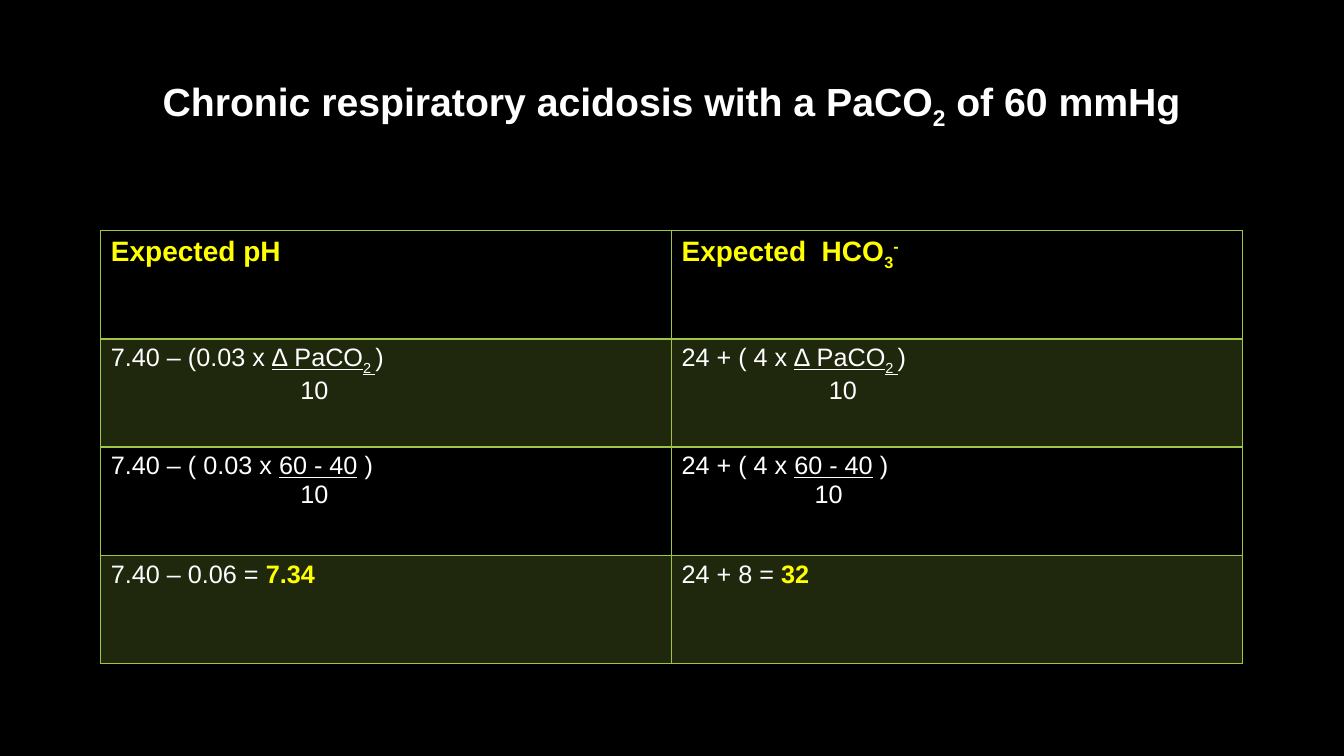
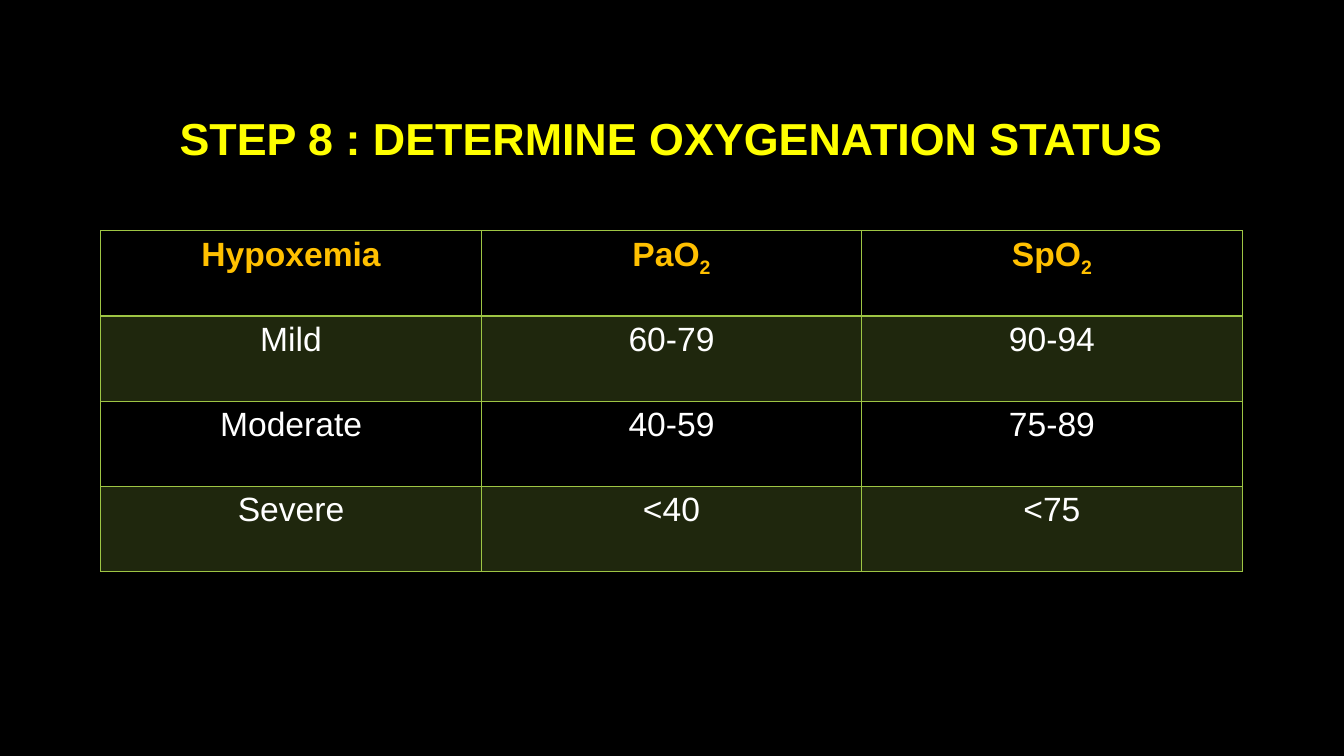
from dataclasses import dataclass

from lxml import etree
from pptx import Presentation
from pptx.dml.color import RGBColor
from pptx.enum.text import MSO_ANCHOR, PP_ALIGN
from pptx.oxml.ns import qn
from pptx.util import Inches, Pt

LEFT = PP_ALIGN.LEFT
CENTER = PP_ALIGN.CENTER
MIDDLE = MSO_ANCHOR.MIDDLE


@dataclass(frozen=True)
class Theme:
    font: str = "Arial"
    back: str = "000000"
    white: str = "FFFFFF"
    yellow: str = "FFFF00"
    gold: str = "FFC000"
    green: str = "9EC544"
    tint: int = 20
    title: int = 28
    step: int = 32
    head: int = 20
    body: int = 18
    grid: int = 24
    thin: int = 1
    thick: int = 2


THEME = Theme()
LEFT_X, WIDE = 1, 11.32
TITLE_Y, TABLE_Y = 0.67, 2.29
SUB = {"base": -25}
SUP = {"base": 30}
LINE = {"underline": True}
KEY = {"color": THEME.yellow, "bold": True}


def ratio(lead, top, tail, gap):
    return [([lead, *top, tail], 0), (["10"], gap)]


class Deck:
    def __init__(self, theme):
        self.theme = theme
        self.prs = Presentation()
        self.prs.slide_width = Inches(13.33)
        self.prs.slide_height = Inches(7.5)
        self.slide = None

    def page(self):
        self.slide = self.prs.slides.add_slide(self.prs.slide_layouts[6])
        fill = self.slide.background.fill
        fill.solid()
        fill.fore_color.rgb = RGBColor.from_string(self.theme.back)

    def style(self, size, color, bold=False):
        return {"name": self.theme.font, "size": Pt(size),
                "color": color, "bold": bold}

    def run(self, para, text, form):
        run = para.add_run()
        run.text = text
        for name, value in form.items():
            if name == "color":
                run.font.color.rgb = RGBColor.from_string(value)
            elif name == "base":
                run._r.get_or_add_rPr().set("baseline", str(value * 1000))
            else:
                setattr(run.font, name, value)

    def text(self, frame, lines, form, align):
        for i, (runs, gap) in enumerate(lines):
            para = frame.add_paragraph() if i else frame.paragraphs[0]
            para.alignment = align
            if gap:
                para._p.get_or_add_pPr().set("marL", str(Inches(gap)))
            for item in runs:
                text, extra = (item, {}) if isinstance(item, str) else item
                self.run(para, text, form | extra)

    def title(self, runs, high, size, color):
        box = self.slide.shapes.add_textbox(
            Inches(LEFT_X), Inches(TITLE_Y), Inches(WIDE), Inches(high))
        frame = box.text_frame
        frame.word_wrap = True
        frame.vertical_anchor = MIDDLE
        self.text(frame, [(runs, 0)], self.style(size, color, True), CENTER)
        frame.paragraphs[0].line_spacing = 0.9

    def border(self, cell, side, width):
        edge = etree.SubElement(cell._tc.get_or_add_tcPr(), qn(f"a:ln{side}"),
                                w=str(Pt(width)))
        fill = etree.SubElement(edge, qn("a:solidFill"))
        etree.SubElement(fill, qn("a:srgbClr"), val=self.theme.green)

    def shade(self, cell, band):
        if not band:
            cell.fill.background()
            return
        cell.fill.solid()
        cell.fill.fore_color.rgb = RGBColor.from_string(self.theme.green)
        color = cell._tc.tcPr.find(qn("a:solidFill")).find(qn("a:srgbClr"))
        etree.SubElement(color, qn("a:alpha"),
                         val=str(self.theme.tint * 1000))

    def table(self, rows, high, head, body, align):
        t = self.theme
        table = self.slide.shapes.add_table(
            len(rows), len(rows[0]), Inches(LEFT_X), Inches(TABLE_Y),
            Inches(WIDE), Inches(high)).table
        table.horz_banding = False
        for r, row in enumerate(rows):
            for c, lines in enumerate(row):
                cell = table.cell(r, c)
                if isinstance(lines, str):
                    lines = [([lines], 0)]
                self.text(cell.text_frame, lines, body if r else head, align)
                widths = {"L": t.thin, "R": t.thin,
                          "T": t.thick if r == 1 else t.thin,
                          "B": t.thin if r else t.thick}
                for side, width in widths.items():
                    self.border(cell, side, width)
                self.shade(cell, r % 2)


def acid(deck):
    t = deck.theme
    deck.page()
    deck.title(["Chronic respiratory acidosis with a PaCO", ("2", SUB),
                " of 60 mmHg"], 0.68, t.title, t.white)
    delta = [("∆ PaCO", LINE), ("2 ", LINE | SUB)]
    span = [("60 - 40", LINE)]
    rows = [
        ["Expected pH",
         [(["Expected  HCO", ("3", SUB), ("-", SUP)], 0)]],
        [ratio("7.40 – (0.03 x ", delta, ")", 1.88),
         ratio("24 + ( 4 x ", delta, ")", 1.46)],
        [ratio("7.40 – ( 0.03 x ", span, " )", 1.88),
         ratio("24 + ( 4 x ", span, " )", 1.32)],
        [[(["7.40 – 0.06 = ", ("7.34", KEY)], 0)],
         [(["24 + 8 = ", ("32", KEY)], 0)]],
    ]
    deck.table(rows, 4.29, deck.style(t.head, t.yellow, True),
               deck.style(t.body, t.white), LEFT)


def oxygen(deck):
    t = deck.theme
    deck.page()
    deck.title(["STEP 8 : DETERMINE OXYGENATION STATUS"], 1.45,
               t.step, t.yellow)
    rows = [
        ["Hypoxemia", [(["PaO", ("2", SUB)], 0)], [(["SpO", ("2", SUB)], 0)]],
        ["Mild", "60-79", "90-94"],
        ["Moderate", "40-59", "75-89"],
        ["Severe", "<40", "<75"],
    ]
    deck.table(rows, 3.38, deck.style(t.grid, t.gold, True),
               deck.style(t.grid, t.white), CENTER)


def main():
    deck = Deck(THEME)
    acid(deck)
    oxygen(deck)
    deck.prs.save("out.pptx")


if __name__ == "__main__":
    main()
